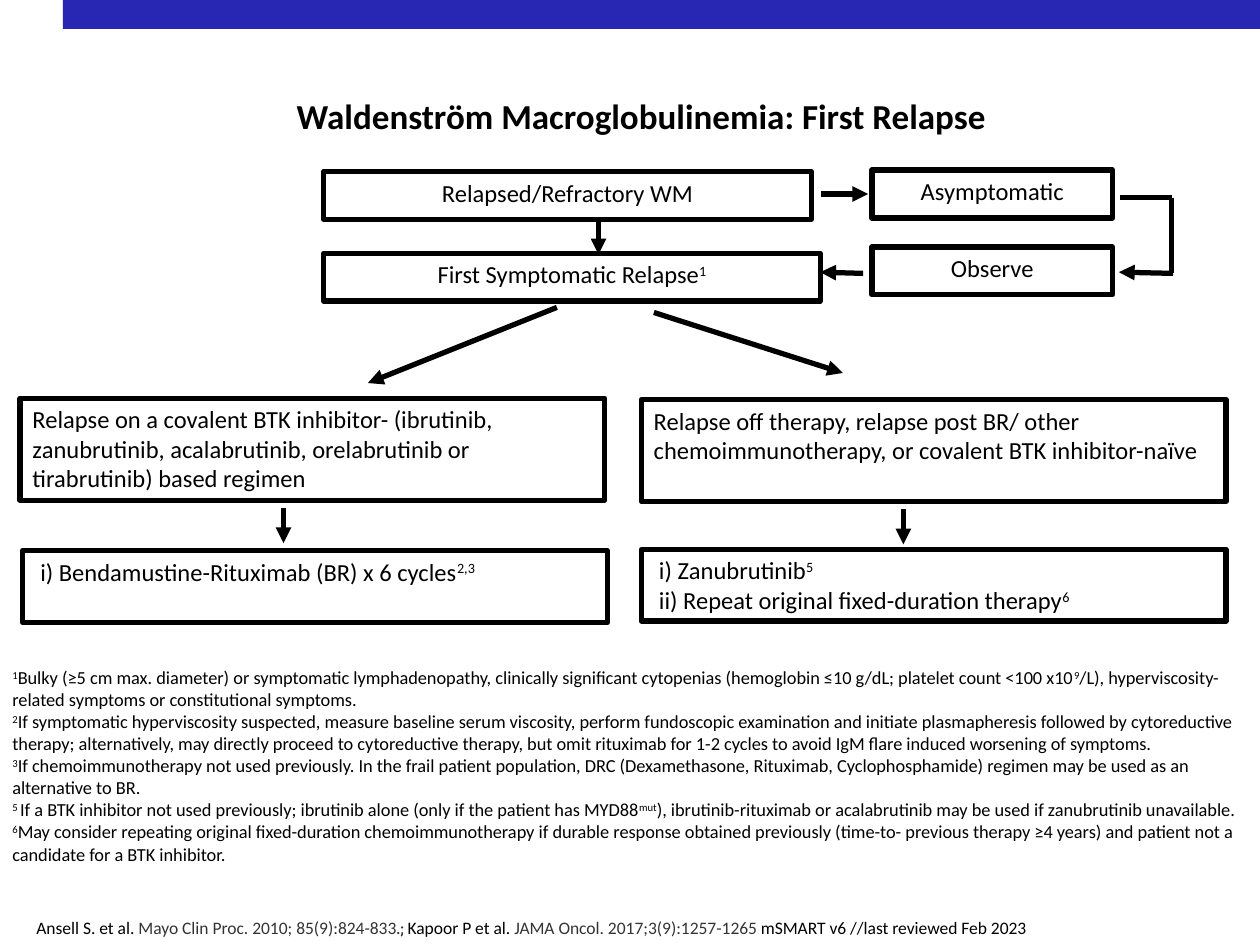
from dataclasses import dataclass
from typing import Any

import pptx
import pptx.dml.color
import pptx.enum.shapes
import pptx.enum.text
import pptx.oxml.xmlchemy
import pptx.util

Inches = pptx.util.Inches
Pt = pptx.util.Pt
Kind = pptx.enum.shapes.MSO_SHAPE
Align = pptx.enum.text.PP_ALIGN
make = pptx.oxml.xmlchemy.OxmlElement

HUES = {"bar": "2727B3", "ink": "000000", "gray": "333333"}
BASE = {"name": "Calibri", "size": Pt(14), "bold": False}


@dataclass
class Box:
    left: float
    top: float
    width: float
    height: float
    lines: list[str]
    align: Any = Align.LEFT
    inset: float = 0.1


@dataclass
class Link:
    x1: float
    y1: float
    x2: float
    y2: float
    head: bool = True


def hue(name: str) -> Any:
    return pptx.dml.color.RGBColor.from_string(HUES[name])


def write(para: Any, text: str, tone: str = "ink", up: bool = False, **style: Any) -> None:
    run = para.add_run()
    run.text = text
    for key, val in (BASE | style).items():
        setattr(run.font, key, val)
    run.font.color.rgb = hue(tone)
    if up:
        run.font._element.set("baseline", "30000")


def fill_text(frame: Any, lines: list[str], align: Any, inset: float, **style: Any) -> None:
    form = {
        "word_wrap": True,
        "vertical_anchor": pptx.enum.text.MSO_ANCHOR.TOP,
        "margin_left": Inches(inset),
    }
    for key, val in form.items():
        setattr(frame, key, val)
    for i, line in enumerate(lines):
        para = frame.add_paragraph() if i else frame.paragraphs[0]
        para.alignment = align
        for j, part in enumerate(line.split("^")):
            if part:
                write(para, part, up=j % 2 == 1, **style)


def draw_box(slide: Any, box: Box) -> None:
    shape = slide.shapes.add_shape(
        Kind.RECTANGLE, Inches(box.left), Inches(box.top), Inches(box.width), Inches(box.height))
    shape.shadow.inherit = False
    shape.fill.background()
    shape.line.color.rgb = hue("ink")
    shape.line.width = Pt(3)
    fill_text(shape.text_frame, box.lines, box.align, box.inset)


def draw_text(slide: Any, box: Box, **style: Any) -> Any:
    area = slide.shapes.add_textbox(
        Inches(box.left), Inches(box.top), Inches(box.width), Inches(box.height))
    fill_text(area.text_frame, box.lines, box.align, box.inset, **style)
    return area


def draw_link(slide: Any, link: Link) -> None:
    line = slide.shapes.add_connector(
        pptx.enum.shapes.MSO_CONNECTOR.STRAIGHT,
        Inches(link.x1), Inches(link.y1), Inches(link.x2), Inches(link.y2))
    line.line.color.rgb = hue("ink")
    line.line.width = Pt(3)
    if link.head:
        tail = make("a:tailEnd")
        tail.set("type", "triangle")
        line.line._get_or_add_ln().append(tail)
    line._element.spPr.append(make("a:effectLst"))


TITLE = Box(0.11, 0.7, 9.96, 0.44, ["Waldenström Macroglobulinemia: First Relapse"], Align.CENTER)

BOXES = [
    Box(2.57, 1.36, 3.87, 0.38, ["Relapsed/Refractory WM"], Align.CENTER),
    Box(6.92, 1.35, 1.91, 0.38, ["Asymptomatic"], Align.CENTER),
    Box(6.92, 1.96, 1.91, 0.38, ["Observe"], Align.CENTER),
    Box(2.57, 2.01, 3.94, 0.38, ["First Symptomatic Relapse^1^"], Align.CENTER),
    Box(0.16, 3.16, 4.64, 0.81, [
        "Relapse on a covalent BTK inhibitor- (ibrutinib, zanubrutinib, acalabrutinib, "
        "orelabrutinib or tirabrutinib) based regimen"]),
    Box(5.09, 3.17, 4.64, 0.81, [
        "Relapse off therapy, relapse post BR/ other chemoimmunotherapy, "
        "or covalent BTK inhibitor-naïve"]),
    Box(0.18, 4.37, 4.64, 0.57, ["i) Bendamustine-Rituximab (BR) x 6 cycles^2,3^"], inset=0.14),
    Box(5.09, 4.36, 4.64, 0.57, [
        "i) Zanubrutinib^5^", "ii) Repeat original fixed-duration therapy^6^"], inset=0.14),
]

LINKS = [
    Link(6.52, 1.54, 6.89, 1.54),
    Link(6.85, 2.17, 6.51, 2.16),
    Link(4.75, 1.74, 4.75, 2.02),
    Link(2.25, 4.03, 2.25, 4.31),
    Link(7.17, 4.04, 7.17, 4.32),
    Link(8.89, 1.57, 9.3, 1.57, False),
    Link(9.3, 1.57, 9.3, 2.17, False),
    Link(9.31, 2.17, 8.88, 2.16),
    Link(4.42, 2.44, 2.92, 3.04),
    Link(5.19, 2.48, 6.69, 2.96),
]

NOTES = Box(0, 5.24, 9.96, 2.22, [
    "^1^Bulky (≥5 cm max. diameter) or symptomatic lymphadenopathy, clinically significant "
    "cytopenias (hemoglobin ≤10 g/dL; platelet count <100 x10^9^/L), hyperviscosity-related "
    "symptoms or constitutional symptoms.",
    "^2^If symptomatic hyperviscosity suspected, measure baseline serum viscosity, perform "
    "fundoscopic examination and initiate plasmapheresis followed by cytoreductive therapy; "
    "alternatively, may directly proceed to cytoreductive therapy, but omit rituximab for "
    "1-2 cycles to avoid IgM flare induced worsening of symptoms.",
    "^3^If chemoimmunotherapy not used previously. In the frail patient population, DRC "
    "(Dexamethasone, Rituximab, Cyclophosphamide) regimen may be used as an alternative to BR.",
    "^5 ^If a BTK inhibitor not used previously; ibrutinib alone (only if the patient has "
    "MYD88^mut^), ibrutinib-rituximab or acalabrutinib may be used if zanubrutinib unavailable.",
    "^6^May consider repeating original fixed-duration chemoimmunotherapy if durable response "
    "obtained previously (time-to- previous therapy ≥4 years) and patient not a candidate for "
    "a BTK inhibitor.",
])

CITES = [
    ("Ansell S. et al. ", "ink", {}),
    ("Mayo Clin Proc. 2010; 85(9):824-833", "gray", {}),
    (".; ", "gray", {"name": "Roboto", "size": Pt(8), "bold": True}),
    ("Kapoor P et al. ", "ink", {}),
    ("JAMA Oncol. 2017;3(9):1257-1265 ", "gray", {}),
    ("mSMART v6 //last reviewed Feb 2023", "ink", {}),
]


def main() -> None:
    deck = pptx.Presentation()
    deck.slide_width, deck.slide_height = Inches(10), Inches(7.5)
    slide = deck.slides.add_slide(deck.slide_layouts[6])

    bar = slide.shapes.add_shape(Kind.RECTANGLE, Inches(0.5), 0, Inches(9.5), Inches(0.23))
    bar.shadow.inherit = False
    bar.fill.solid()
    bar.fill.fore_color.rgb = hue("bar")
    bar.line.fill.background()

    draw_text(slide, TITLE, size=Pt(20), bold=True)
    draw_text(slide, NOTES, size=Pt(10.5))
    for box in BOXES:
        draw_box(slide, box)
    for link in LINKS:
        draw_link(slide, link)

    foot = draw_text(slide, Box(0.19, 7.23, 9.72, 0.27, [""]))
    for text, tone, style in CITES:
        write(foot.text_frame.paragraphs[0], text, tone, **({"size": Pt(10)} | style))

    deck.save("out.pptx")


if __name__ == "__main__":
    main()
